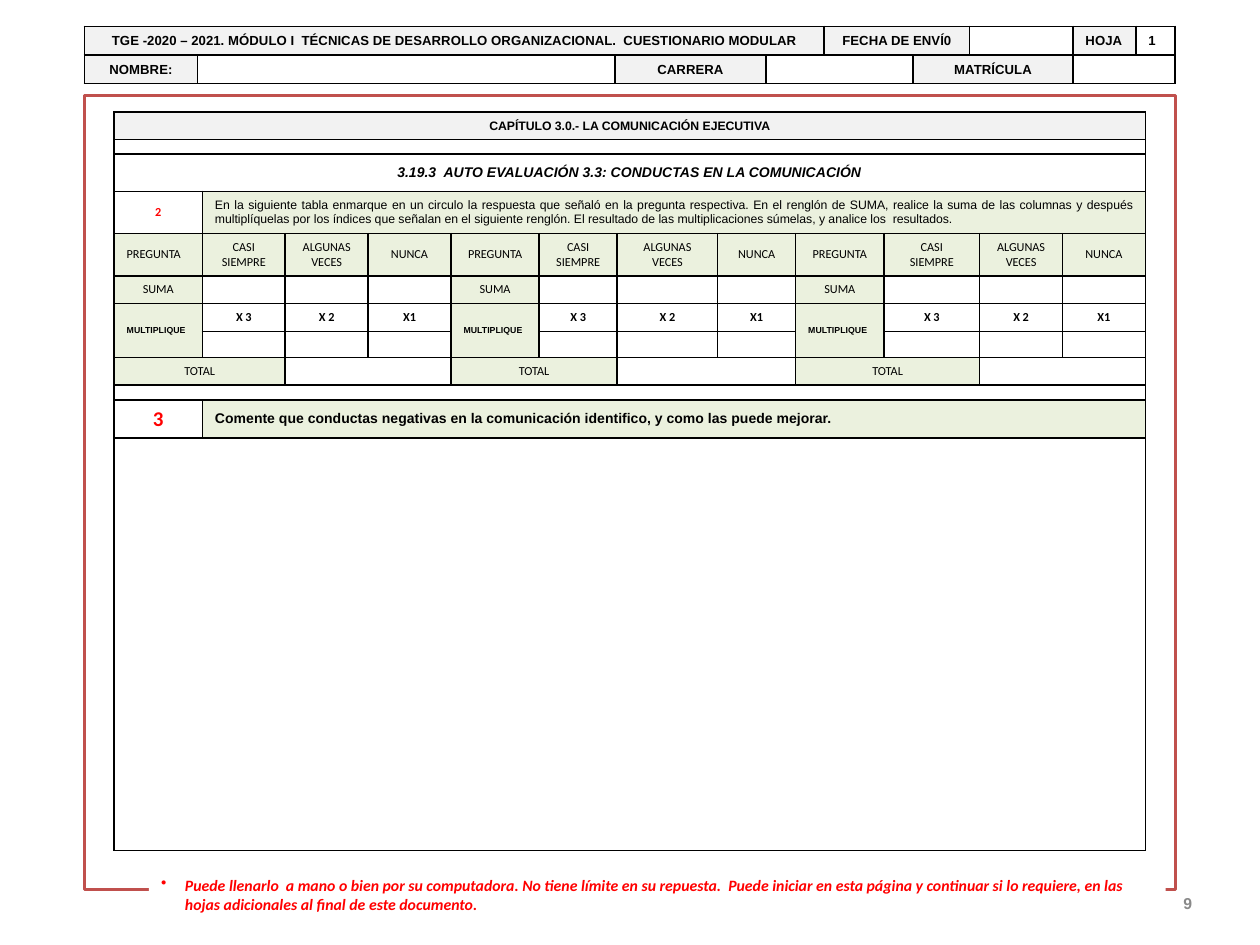
from dataclasses import dataclass

from lxml.etree import SubElement
from pptx import Presentation
from pptx.dml.color import RGBColor
from pptx.enum.shapes import MSO_SHAPE as Shape
from pptx.enum.text import MSO_ANCHOR as Anchor, PP_ALIGN as Align
from pptx.oxml import parse_xml
from pptx.oxml.ns import nsdecls, qn
from pptx.util import Cm, Pt

BLACK = RGBColor(0x00, 0x00, 0x00)
WHITE = RGBColor(0xFF, 0xFF, 0xFF)
RED = RGBColor(0xFF, 0x00, 0x00)
BRICK = RGBColor(0xC0, 0x50, 0x4D)
GREY = RGBColor(0x89, 0x89, 0x89)
LIGHT_GREY = RGBColor(0xF2, 0xF2, 0xF2)
LIGHT_GREEN = RGBColor(0xEB, 0xF1, 0xDE)

BODY_COLUMNS = [0.7, 0.66, 0.66, 0.66, 0.7, 0.62, 0.8, 0.62, 0.7, 0.76, 0.66, 0.66]
BODY_ROWS = [0.53, 0.29, 0.75, 0.79, 0.85, 0.56, 0.56, 0.52, 0.56, 0.3, 0.76, 8.31]
HEADER_COLUMNS = [0.9, 3.32, 1.2, 0.46, 0.71, 0.45, 0.82, 0.5, 0.31]
HEADER_ROWS = [0.57, 0.57]
BLOCK_WIDTH = 4


@dataclass
class Box:
    left: float
    top: float
    width: float
    height: float

    def lengths(self):
        return [Cm(value) for value in (self.left, self.top, self.width, self.height)]


@dataclass
class Style:
    size: float
    name: str = "Arial"
    bold: bool = False
    italic: bool = False
    color: RGBColor = BLACK
    align: Align = Align.CENTER


HEADER = Style(7.5, bold=True)
HEADER_LEFT = Style(7.5, bold=True, align=Align.LEFT)
CHAPTER = Style(7, bold=True)
SECTION = Style(8, bold=True, italic=True)
INSTRUCTION = Style(7, align=Align.JUSTIFY)
COMMENT = Style(8, bold=True, align=Align.LEFT)
LABEL = Style(7, "Calibri")
LABEL_LEFT = Style(7, "Calibri", align=Align.LEFT)
FACTOR = Style(7, "Calibri", bold=True)
MULTIPLY = Style(5, bold=True, align=Align.LEFT)
STEP_SMALL = Style(7, "Calibri", bold=True, color=RED)
STEP_LARGE = Style(12, "Calibri", bold=True, color=RED)
NOTE = Style(9, "Calibri", bold=True, italic=True, color=RED, align=Align.LEFT)
NUMBER = Style(9, bold=True, color=GREY, align=Align.RIGHT)


def write(frame, text, style):
    frame.text = text
    frame.word_wrap = True
    for para in frame.paragraphs:
        para.alignment = style.align
        font = para.font
        font.size, font.name = Pt(style.size), style.name
        font.bold, font.italic = style.bold, style.italic
        font.color.rgb = style.color


def add_borders(cell):
    properties = cell._tc.get_or_add_tcPr()
    for index, side in enumerate(("lnL", "lnR", "lnT", "lnB")):
        properties.insert(index, parse_xml(
            f'<a:{side} {nsdecls("a")} w="{Pt(1)}"><a:solidFill>'
            f'<a:srgbClr val="{BLACK}"/></a:solidFill></a:{side}>'))


def add_grid(page, box, columns, rows):
    table = page.shapes.add_table(len(rows), len(columns), *box.lengths()).table
    table.first_row = table.horz_banding = False
    scale = box.width / sum(columns)
    for column, width in zip(table.columns, columns):
        column.width = Cm(round(width * scale, 2))
    for row, height in zip(table.rows, rows):
        row.height = Cm(height)
    for cell in table.iter_cells():
        cell.fill.solid()
        cell.fill.fore_color.rgb = WHITE
        cell.margin_top = cell.margin_bottom = 0
        cell.text_frame.paragraphs[0].font.size = Pt(5)
        add_borders(cell)
    return table


def merge(table, row, column, width=1, height=1):
    cell = table.cell(row, column)
    cell.merge(table.cell(row + height - 1, column + width - 1))
    return cell


def fill_cell(cell, text, style, fill=WHITE):
    cell.fill.fore_color.rgb = fill
    cell.vertical_anchor = Anchor.MIDDLE
    cell.margin_top = cell.margin_bottom = Cm(0.13)
    write(cell.text_frame, text, style)


def add_header(page, box):
    table = add_grid(page, box, HEADER_COLUMNS, HEADER_ROWS)
    title = "TGE -2020 – 2021. MÓDULO I  TÉCNICAS DE DESARROLLO ORGANIZACIONAL.  CUESTIONARIO MODULAR"
    fill_cell(merge(table, 0, 0, 4), title, HEADER, LIGHT_GREY)
    fill_cell(merge(table, 0, 4, 2), "FECHA DE ENVÍ0", HEADER, LIGHT_GREY)
    fill_cell(table.cell(0, 7), "HOJA", HEADER_LEFT, LIGHT_GREY)
    fill_cell(table.cell(0, 8), "1", HEADER_LEFT)
    fill_cell(table.cell(1, 0), "NOMBRE:", HEADER, LIGHT_GREY)
    fill_cell(table.cell(1, 2), "CARRERA", HEADER, LIGHT_GREY)
    merge(table, 1, 3, 2)
    fill_cell(merge(table, 1, 5, 2), "MATRÍCULA", HEADER, LIGHT_GREY)
    merge(table, 1, 7, 2)


def fill_score_block(table, start):
    question = LABEL if start else LABEL_LEFT
    fill_cell(table.cell(4, start), "PREGUNTA", question, LIGHT_GREEN)
    fill_cell(table.cell(5, start), "SUMA", LABEL, LIGHT_GREEN)
    fill_cell(merge(table, 6, start, height=2), "MULTIPLIQUE", MULTIPLY, LIGHT_GREEN)
    answers = [("CASI\nSIEMPRE", "X 3"), ("ALGUNAS VECES", "X 2"), ("NUNCA", "X1")]
    for column, (answer, factor) in enumerate(answers, start + 1):
        fill_cell(table.cell(4, column), answer, LABEL, LIGHT_GREEN)
        fill_cell(table.cell(6, column), factor, FACTOR)
    fill_cell(merge(table, 8, start, 2), "TOTAL", LABEL, LIGHT_GREEN)
    merge(table, 8, start + 2, 2)


def add_evaluation(page, box):
    table = add_grid(page, box, BODY_COLUMNS, BODY_ROWS)
    count = len(BODY_COLUMNS)
    for row in (0, 1, 2, 9, 11):
        merge(table, row, 0, count)
    fill_cell(table.cell(0, 0), "CAPÍTULO 3.0.- LA COMUNICACIÓN EJECUTIVA", CHAPTER, LIGHT_GREY)
    fill_cell(table.cell(2, 0), "3.19.3  AUTO EVALUACIÓN 3.3: CONDUCTAS EN LA COMUNICACIÓN", SECTION)
    steps = [
        (3, "2", STEP_SMALL, INSTRUCTION,
         "En la siguiente tabla enmarque en un circulo la respuesta que señaló en la pregunta "
         "respectiva. En el renglón de SUMA, realice la suma de las columnas y después "
         "multiplíquelas por los índices que señalan en el siguiente renglón. El resultado de "
         "las multiplicaciones súmelas, y analice los  resultados."),
        (10, "3", STEP_LARGE, COMMENT,
         "Comente que conductas negativas en la comunicación identifico, y como las puede mejorar."),
    ]
    for row, number, number_style, text_style, text in steps:
        fill_cell(table.cell(row, 0), number, number_style)
        fill_cell(merge(table, row, 1, count - 1), text, text_style, LIGHT_GREEN)
    for start in range(0, count, BLOCK_WIDTH):
        fill_score_block(table, start)


def add_frame(page, box):
    frame = page.shapes.add_shape(Shape.RECTANGLE, *box.lengths())
    frame.shadow.inherit = False
    frame.fill.background()
    frame.line.color.rgb = BRICK
    frame.line.width = Pt(2)


def add_note(page, box):
    note = page.shapes.add_shape(Shape.RECTANGLE, *box.lengths())
    note.shadow.inherit = False
    note.fill.solid()
    note.fill.fore_color.rgb = WHITE
    note.line.fill.background()
    note.text_frame.vertical_anchor = Anchor.MIDDLE
    write(note.text_frame,
          "Puede llenarlo  a mano o bien por su computadora. No tiene límite en su repuesta.  "
          "Puede iniciar en esta página y continuar si lo requiere, en las hojas adicionales "
          "al final de este documento.", NOTE)
    properties = note.text_frame.paragraphs[0]._p.get_or_add_pPr()
    properties.set("marL", str(Cm(0.48)))
    properties.set("indent", str(-Cm(0.48)))
    bullet = SubElement(properties, qn("a:buChar"), char="•")
    properties.find(qn("a:defRPr")).addprevious(bullet)


def add_page_number(page, box):
    number = page.shapes.add_textbox(*box.lengths())
    number.text_frame.vertical_anchor = Anchor.MIDDLE
    write(number.text_frame, "9", NUMBER)


def main():
    deck = Presentation()
    deck.slide_width, deck.slide_height = Cm(25.4), Cm(19.05)
    page = deck.slides.add_slide(deck.slide_layouts[6])
    add_frame(page, Box(1.7, 1.93, 22, 16))
    add_page_number(page, Box(18.36, 17.7, 5.92, 1.02))
    add_evaluation(page, Box(2.3, 2.26, 20.8, 14.78))
    add_note(page, Box(3, 17.73, 20.5, 0.61))
    add_header(page, Box(1.7, 0.53, 22, 1.14))
    deck.save("out.pptx")


if __name__ == "__main__":
    main()
